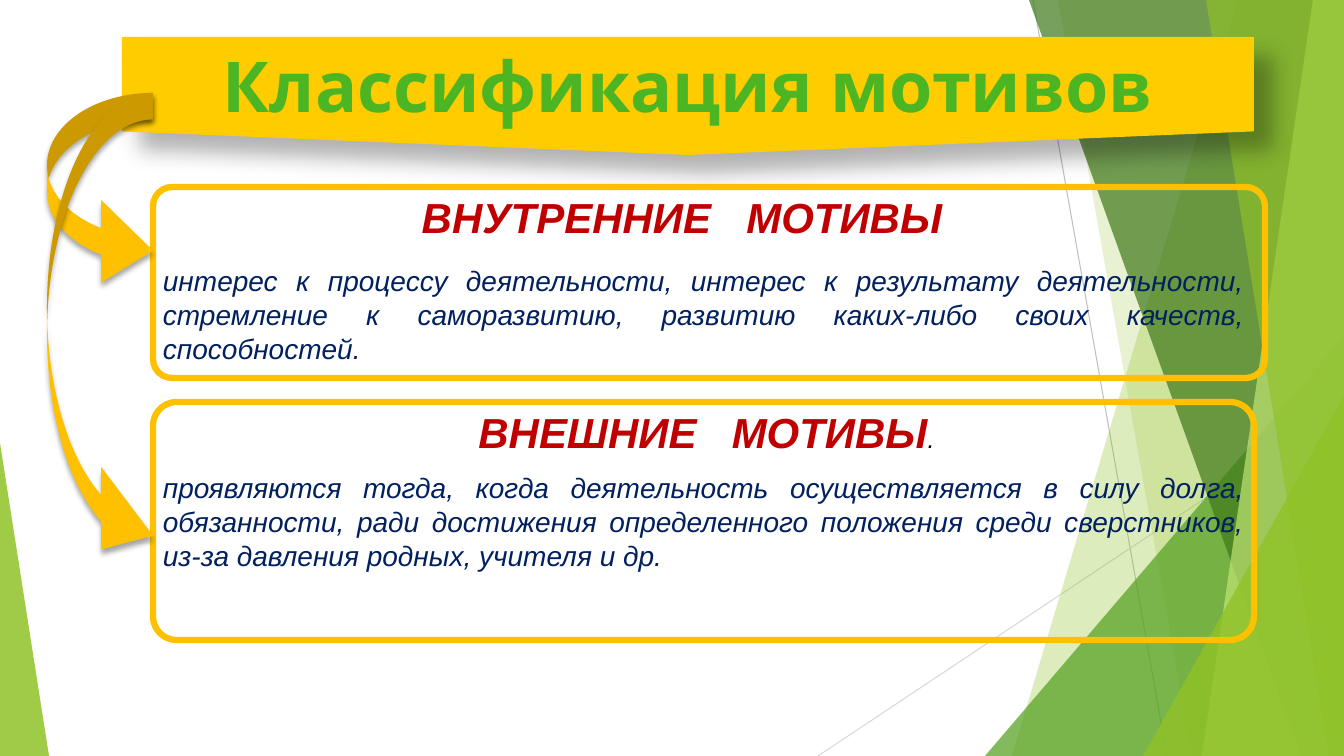
from lxml import etree
from pptx import Presentation
from pptx.dml.color import RGBColor
from pptx.enum.shapes import MSO_CONNECTOR, MSO_SHAPE
from pptx.enum.text import MSO_ANCHOR, PP_ALIGN
from pptx.oxml.ns import qn
from pptx.util import Pt

SLIDE_W, SLIDE_H = 1344, 756
EMU_PER_PX = 12192000 / SLIDE_W

BLACK = RGBColor(0x00, 0x00, 0x00)
GREY = RGBColor(0xBF, 0xBF, 0xBF)
LIGHT_GREY = RGBColor(0xD9, 0xD9, 0xD9)
LEAF = RGBColor(0x90, 0xC2, 0x26)
GREEN = RGBColor(0x54, 0xA0, 0x21)
DARK_GREEN = RGBColor(0x3F, 0x78, 0x19)
PALE_GREEN = RGBColor(0xC0, 0xE4, 0x74)
TITLE_GREEN = RGBColor(0x4C, 0xB5, 0x23)
YELLOW = RGBColor(0xFF, 0xCC, 0x00)
AMBER = RGBColor(0xFF, 0xC0, 0x00)
RED = RGBColor(0xC0, 0x00, 0x00)
NAVY = RGBColor(0x00, 0x20, 0x60)

TITLE = {"name": "Karla", "size": Pt(50), "bold": True}
HEADING = {"name": "Arial", "size": Pt(30), "bold": True, "italic": True}
DOT = {"name": "Arial", "size": Pt(18), "italic": True}
BODY = {"name": "Arial", "size": Pt(20), "italic": True}
WORD_GAP = 1670  # extra space between heading words, 1/100 pt


def px(n):
    return round(n * EMU_PER_PX)


def paint(sp, color, opacity=100):
    """Solid fill without outline; opacity in percent."""
    sp.shadow.inherit = False
    sp.fill.solid()
    sp.fill.fore_color.rgb = color
    sp.line.fill.background()
    if opacity < 100:
        clr = sp._element.spPr.find(".//" + qn("a:srgbClr"))
        etree.SubElement(clr, qn("a:alpha"), val=str(opacity * 1000))


def add_shadow(sp, opacity, blur, dist, angle):
    effects = sp._element.spPr.find(qn("a:effectLst"))
    shadow = etree.SubElement(
        effects, qn("a:outerShdw"), blurRad=str(Pt(blur)), dist=str(Pt(dist)),
        dir=str(angle * 60000), algn="tl", rotWithShape="0")
    clr = etree.SubElement(shadow, qn("a:srgbClr"), val=str(BLACK))
    etree.SubElement(clr, qn("a:alpha"), val=str(opacity * 1000))


def add_preset(s, kind, box, adjustments=()):
    sp = s.shapes.add_shape(kind, *map(px, box))
    for i, value in enumerate(adjustments):
        sp.adjustments[i] = value
    return sp


def add_line(s, start, end, color):
    line = s.shapes.add_connector(MSO_CONNECTOR.STRAIGHT, *map(px, start + end))
    line.line.color.rgb = color
    line.line.width = Pt(0.75)
    etree.SubElement(line._element.spPr, qn("a:effectLst"))


def add_band(s, top_x, bottom_x, color, opacity):
    """Area between a slanted edge and the right side of the slide."""
    fb = s.shapes.build_freeform(px(top_x), 0)
    fb.add_line_segments([(px(x), px(y)) for x, y in (
        (SLIDE_W, 0), (SLIDE_W, SLIDE_H), (bottom_x, SLIDE_H))], close=True)
    paint(fb.convert_to_shape(), color, opacity)


def add_triangle(s, box, apex, color, opacity):
    sp = add_preset(s, MSO_SHAPE.ISOSCELES_TRIANGLE, box, [apex])
    paint(sp, color, opacity)


def add_frame(s, box):
    sp = add_preset(s, MSO_SHAPE.ROUNDED_RECTANGLE, box, [0.1])
    sp.shadow.inherit = False
    sp.fill.background()
    sp.line.color.rgb = AMBER
    sp.line.width = Pt(4.5)


def add_arrow(s, box):
    sp = add_preset(s, MSO_SHAPE.CURVED_RIGHT_ARROW, box, [0.25, 0.78, 0.49])
    paint(sp, AMBER)
    add_shadow(sp, 35, 4, 3, 90)


def add_run(p, text, fmt, color, spacing=0):
    r = p.add_run()
    r.text = text
    for name, value in fmt.items():
        setattr(r.font, name, value)
    r.font.color.rgb = color
    if spacing:
        r._r.get_or_add_rPr().set("spc", str(spacing))


def add_text(s, box, align):
    tf = s.shapes.add_textbox(*map(px, box)).text_frame
    tf.word_wrap = True
    p = tf.paragraphs[0]
    p.alignment = align
    return p


def add_heading(s, box, first, second):
    p = add_text(s, box, PP_ALIGN.CENTER)
    add_run(p, first, HEADING, RED)
    add_run(p, " ", HEADING, RED, WORD_GAP)
    add_run(p, second, HEADING, RED)
    return p


def add_body(s, box, text):
    add_run(add_text(s, box, PP_ALIGN.JUSTIFY), text, BODY, NAVY)


def add_banner(s, box, text):
    sp = add_preset(s, MSO_SHAPE.FLOWCHART_OFFPAGE_CONNECTOR, box)
    paint(sp, YELLOW)
    add_shadow(sp, 30, 15, 18, 45)
    tf = sp.text_frame
    tf.word_wrap = True
    tf.vertical_anchor = MSO_ANCHOR.MIDDLE
    p = tf.paragraphs[0]
    p.alignment = PP_ALIGN.CENTER
    add_run(p, text, TITLE, TITLE_GREEN)


def add_backdrop(s):
    add_line(s, (1033, 0), (1167, SLIDE_H), GREY)
    add_line(s, (SLIDE_W, 406), (818, SLIDE_H), LIGHT_GREY)
    add_band(s, 1238, 1012, LEAF, 30)
    add_band(s, 1058, 1192, LEAF, 20)
    add_triangle(s, (985, 336, 359, 420), 1, GREEN, 72)
    add_band(s, 1029, 1301, DARK_GREEN, 70)
    add_band(s, 1313, 1202, PALE_GREEN, 70)
    add_band(s, 1206, 1329, LEAF, 65)
    add_triangle(s, (1143, 396, 201, 360), 1, LEAF, 80)
    add_triangle(s, (0, 443, 49, 313), 0, LEAF, 85)


def main():
    prs = Presentation()
    prs.slide_width, prs.slide_height = px(SLIDE_W), px(SLIDE_H)
    s = prs.slides.add_slide(prs.slide_layouts[6])

    # Backdrop and title
    add_backdrop(s)
    add_banner(s, (122, 37, 1132, 118), "Классификация мотивов")

    # Frames and the arrows leading to them
    add_frame(s, (153, 187, 1112, 191))
    add_frame(s, (153, 402, 1101, 238))
    for height in (199, 484):
        add_arrow(s, (47, 93, 106, height))

    # Internal motives
    add_heading(s, (147, 187, 1070, 95), "ВНУТРЕННИЕ", "МОТИВЫ")
    add_body(s, (153, 259, 1101, 112),
             "интерес к процессу деятельности, интерес к результату деятельности, "
             "стремление к саморазвитию, развитию каких-либо своих качеств, "
             "способностей.")

    # External motives
    p = add_heading(s, (156, 402, 1101, 61), "ВНЕШНИЕ", "МОТИВЫ")
    add_run(p, ".", DOT, BLACK)
    add_body(s, (153, 466, 1101, 112),
             "проявляются тогда, когда деятельность осуществляется в силу долга, "
             "обязанности, ради достижения определенного положения среди "
             "сверстников, из-за давления родных, учителя и др.")

    prs.save("out.pptx")


if __name__ == "__main__":
    main()
